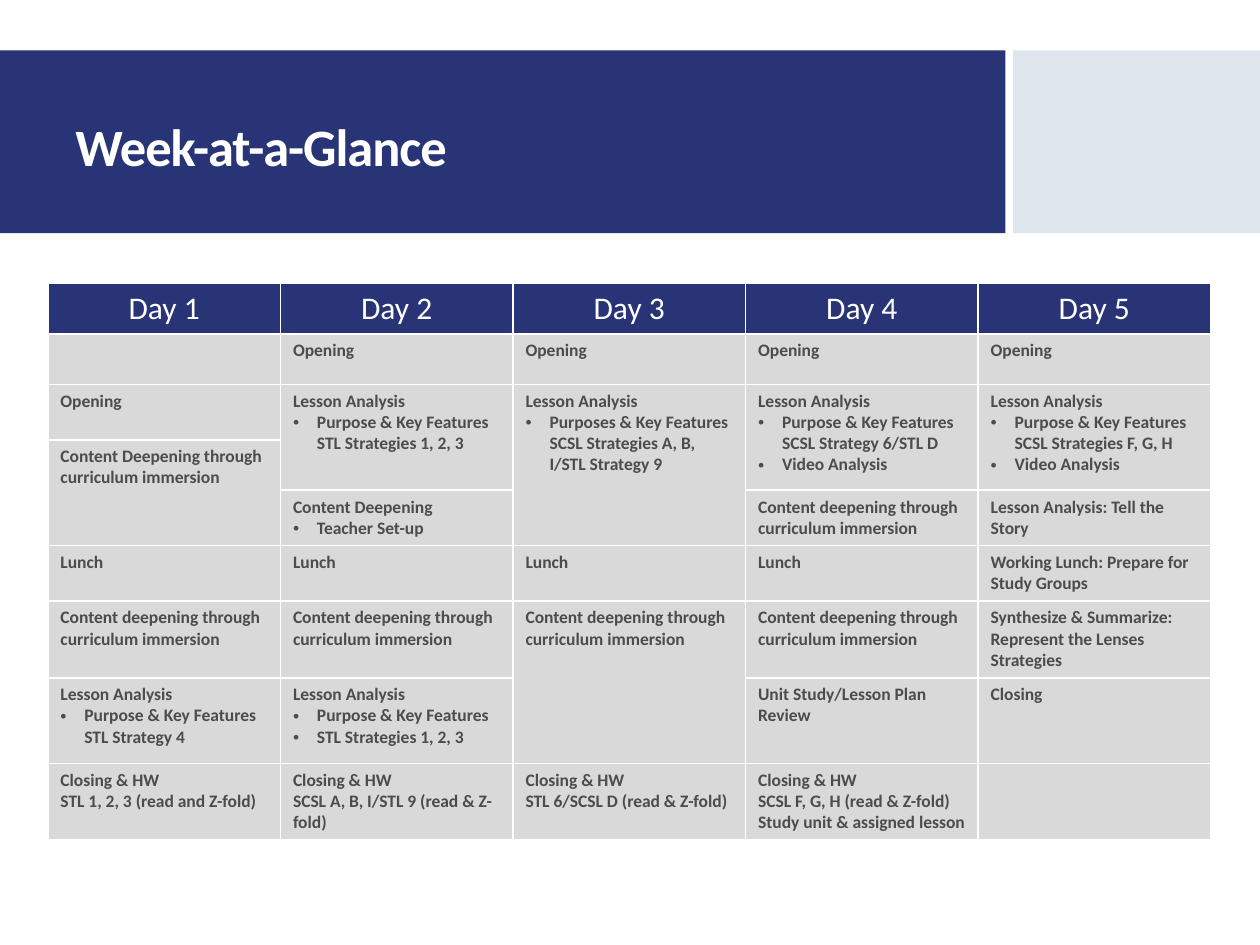
"""Build the Week-at-a-Glance schedule slide."""
from lxml.etree import SubElement
from pptx import Presentation
from pptx.dml.color import RGBColor
from pptx.enum.shapes import MSO_SHAPE
from pptx.enum.text import MSO_ANCHOR, PP_ALIGN
from pptx.oxml.ns import qn
from pptx.util import Inches, Pt

NAVY, PALE, GREY, INK, WHITE = "293476", "DFE5ED", "D9D9D9", "4C4C4C", "FFFFFF"
TITLE = {"name": "Calibri", "size": Pt(30), "bold": True}
HEADING = {"name": "Calibri", "size": Pt(18), "bold": False}
ENTRY = {"name": "Calibri", "size": Pt(10), "bold": True}


def paint(target, colour):
    target.rgb = RGBColor.from_string(colour)


def style(font, values, colour):
    for key, value in values.items():
        setattr(font, key, value)
    paint(font.color, colour)


analysis = "Lesson Analysis"
immersion = "Content deepening through curriculum immersion"
closing = "Closing & HW"
days = [
    [
        (1, []),
        (1, ["Opening"]),
        (2, ["Content Deepening through curriculum immersion"]),
        (1, ["Lunch"]),
        (1, [immersion]),
        (1, [analysis, "• Purpose & Key Features STL Strategy 4"]),
        (1, [closing, "STL 1, 2, 3 (read and Z-fold)"]),
    ],
    [
        (1, ["Opening"]),
        (2, [analysis, "• Purpose & Key Features STL Strategies 1, 2, 3"]),
        (1, ["Content Deepening", "• Teacher Set-up"]),
        (1, ["Lunch"]),
        (1, [immersion]),
        (1, [analysis, "• Purpose & Key Features", "• STL Strategies 1, 2, 3"]),
        (1, [closing, "SCSL A, B, I/STL 9 (read & Z-fold)"]),
    ],
    [
        (1, ["Opening"]),
        (3, [analysis, "• Purposes & Key Features SCSL Strategies A, B, I/STL Strategy 9"]),
        (1, ["Lunch"]),
        (2, [immersion]),
        (1, [closing, "STL 6/SCSL D (read & Z-fold)"]),
    ],
    [
        (1, ["Opening"]),
        (2, [analysis, "• Purpose & Key Features SCSL Strategy 6/STL D", "• Video Analysis"]),
        (1, [immersion]),
        (1, ["Lunch"]),
        (1, [immersion]),
        (1, ["Unit Study/Lesson Plan Review"]),
        (1, [closing, "SCSL F, G, H (read & Z-fold)", "Study unit & assigned lesson"]),
    ],
    [
        (1, ["Opening"]),
        (2, [analysis, "• Purpose & Key Features SCSL Strategies F, G, H", "• Video Analysis"]),
        (1, ["Lesson Analysis: Tell the Story"]),
        (1, ["Working Lunch: Prepare for Study Groups"]),
        (1, ["Synthesize & Summarize: Represent the Lenses Strategies"]),
        (1, ["Closing"]),
        (1, []),
    ],
]
row_heights = [0.4, 0.4, 0.44, 0.4, 0.44, 0.44, 0.61, 0.68, 0.6]

deck = Presentation()
deck.slide_width, deck.slide_height = Inches(10), Inches(7.5)
slide = deck.slides.add_slide(deck.slide_layouts[6])

for left, width, colour in [(0, 7.98, NAVY), (8.04, 1.96, PALE)]:
    band = slide.shapes.add_shape(
        MSO_SHAPE.RECTANGLE, Inches(left), Inches(0.4), Inches(width), Inches(1.45)
    )
    band.shadow.inherit = False
    band.fill.solid()
    paint(band.fill.fore_color, colour)
    band.line.fill.background()

title = slide.shapes.add_textbox(Inches(0.5), Inches(0.58), Inches(6.93), Inches(1.22)).text_frame
title.word_wrap = True
title.vertical_anchor = MSO_ANCHOR.MIDDLE
title.paragraphs[0].line_spacing = 0.9
heading = title.paragraphs[0].add_run()
heading.text = "Week-at-a-Glance"
style(heading.font, TITLE, WHITE)
heading.font._element.set("spc", "-60")

schedule = slide.shapes.add_table(
    len(row_heights), len(days), Inches(0.38), Inches(2.25), Inches(9.23), Inches(sum(row_heights))
).table
schedule.first_row = schedule.horz_banding = False
for row, height in zip(schedule.rows, row_heights):
    row.height = Inches(height)

for r in range(len(row_heights)):
    for c in range(len(days)):
        cell = schedule.cell(r, c)
        properties = cell._tc.get_or_add_tcPr()
        for side in ("lnL", "lnR", "lnT", "lnB"):
            border = SubElement(properties, qn(f"a:{side}"), w=str(Pt(1)))
            SubElement(SubElement(border, qn("a:solidFill")), qn("a:srgbClr"), val=WHITE)
        cell.fill.solid()
        paint(cell.fill.fore_color, GREY if r else NAVY)

for c, sessions in enumerate(days):
    day = schedule.cell(0, c).text_frame.paragraphs[0]
    day.alignment = PP_ALIGN.CENTER
    label = day.add_run()
    label.text = f"Day {c + 1}"
    style(label.font, HEADING, WHITE)
    r = 1
    for span, lines in sessions:
        cell = schedule.cell(r, c)
        if span > 1:
            cell.merge(schedule.cell(r + span - 1, c))
        for i, line in enumerate(lines):
            frame = cell.text_frame
            paragraph = frame.add_paragraph() if i else frame.paragraphs[0]
            if line.startswith("• "):
                indent = paragraph._p.get_or_add_pPr()
                indent.set("marL", str(Inches(0.19)))
                indent.set("indent", str(-Inches(0.19)))
                SubElement(indent, qn("a:buFont"), typeface="Arial")
                SubElement(indent, qn("a:buChar"), char="•")
            entry = paragraph.add_run()
            entry.text = line.removeprefix("• ")
            style(entry.font, ENTRY, INK)
        r += span

deck.save("out.pptx")
